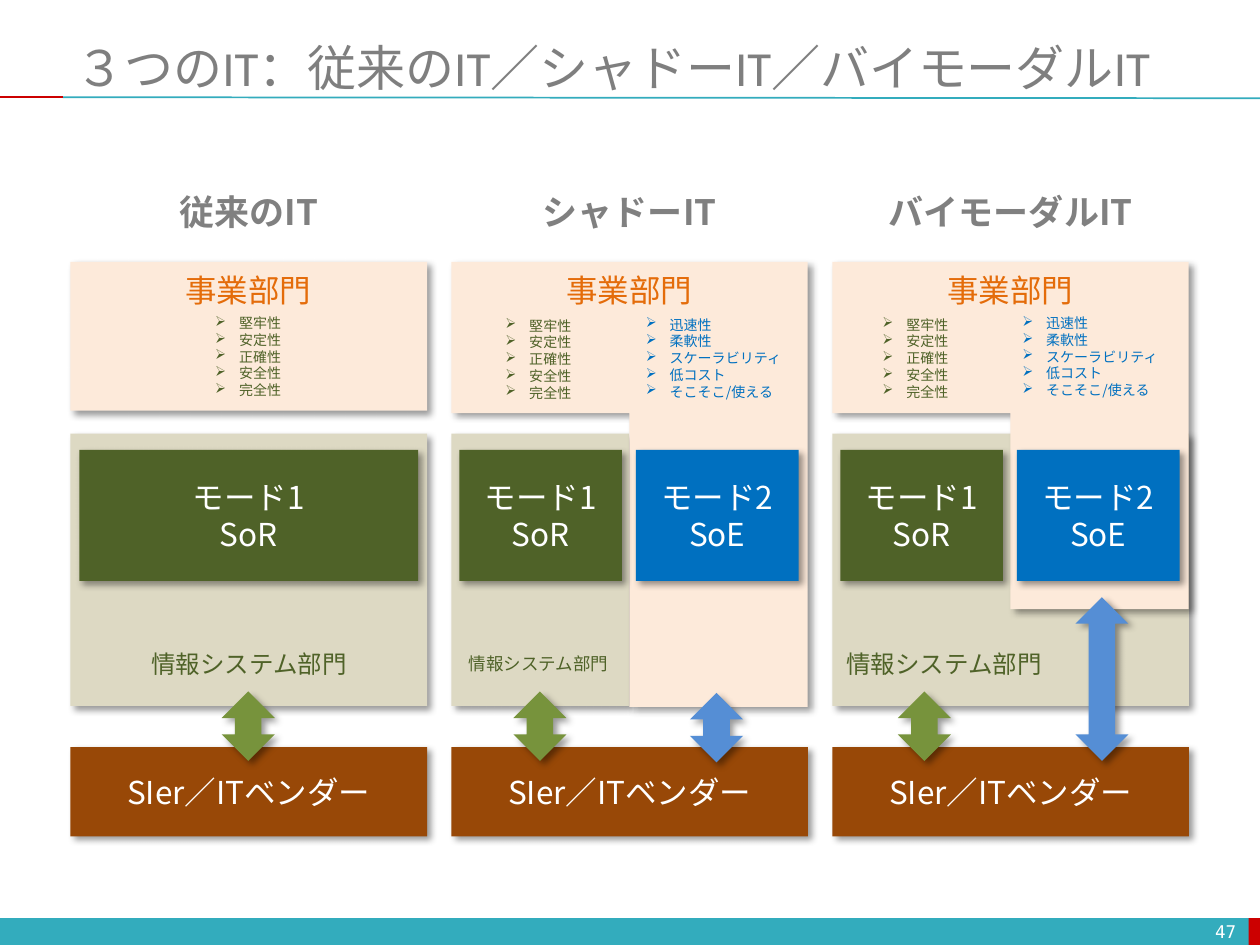
"""Build a slide comparing traditional, shadow and bimodal IT organisations."""
import pptx
import pptx.dml.color
import pptx.enum.shapes
import pptx.enum.text
import pptx.oxml
import pptx.oxml.ns
import pptx.util
from pptx.util import Cm

COLORS = {
    "teal": "33ACBD", "red": "CC0000", "title": "7F7F7F", "heading": "808080",
    "white": "FFFFFF", "system": "DDD9C3", "business": "FDEADA", "vendor": "984807",
    "robust": "4F6228", "agile": "0070C0", "label": "E46C0A",
    "green arrow": "77933C", "blue arrow": "558ED5",
}
FONT = "Noto Sans CJK JP"
SHADOW = (
    '<a:effectLst %s><a:outerShdw blurRad="50800" dist="38100" dir="2700000" algn="tl" '
    'rotWithShape="0"><a:srgbClr val="000000"><a:alpha val="40000"/></a:srgbClr>'
    '</a:outerShdw></a:effectLst>' % pptx.oxml.ns.nsdecls("a")
)
SHAPE = pptx.enum.shapes.MSO_SHAPE
ALIGN = pptx.enum.text.PP_ALIGN
ANCHOR = pptx.enum.text.MSO_ANCHOR


def paint(shape, color, shadow=True):
    """Fill a shape without an outline and give it a soft shadow if wanted."""
    shape.shadow.inherit = False
    shape.fill.solid()
    shape.fill.fore_color.rgb = pptx.dml.color.RGBColor.from_string(COLORS[color])
    shape.line.fill.background()
    if shadow:
        properties = shape._element.spPr
        properties.remove(properties.find(pptx.oxml.ns.qn("a:effectLst")))
        properties.append(pptx.oxml.parse_xml(SHADOW))


def write(shape, lines, size, color, align=ALIGN.CENTER, font=FONT, bold=False,
          bullet=None, label=False):
    """Write one paragraph per line; a label grows to its text instead of wrapping."""
    frame = shape.text_frame
    frame.word_wrap = not label
    frame.vertical_anchor = ANCHOR.TOP if label else ANCHOR.MIDDLE
    frame.auto_size = (pptx.enum.text.MSO_AUTO_SIZE.SHAPE_TO_FIT_TEXT if label
                       else pptx.enum.text.MSO_AUTO_SIZE.NONE)
    for number, line in enumerate(lines):
        para = frame.paragraphs[0] if number == 0 else frame.add_paragraph()
        para.alignment = align
        if bullet:
            settings = para._p.get_or_add_pPr()
            settings.set("marL", str(Cm(0.48)))
            settings.set("indent", str(-Cm(0.48)))
            mark = pptx.oxml.parse_xml('<a:buChar %s/>' % pptx.oxml.ns.nsdecls("a"))
            mark.set("char", bullet)
            settings.append(mark)
        span = para.add_run()
        span.text = line
        span.font.size = pptx.util.Pt(size)
        span.font.bold = bold
        span.font.name = font
        span.font.color.rgb = pptx.dml.color.RGBColor.from_string(COLORS[color])
        east_asian = pptx.oxml.parse_xml('<a:ea %s/>' % pptx.oxml.ns.nsdecls("a"))
        east_asian.set("typeface", FONT)
        span._r.get_or_add_rPr().append(east_asian)


deck = pptx.Presentation()
deck.slide_width, deck.slide_height = Cm(25.4), Cm(19.05)
page = deck.slides.add_slide(deck.slide_layouts[5])
shapes = page.shapes

for left, width, color in ((0, 25.4, "teal"), (25.17, 0.23, "red")):
    band = shapes.add_shape(SHAPE.RECTANGLE, Cm(left), Cm(18.51), Cm(width), Cm(0.54))
    paint(band, color, shadow=False)

for start, end, drop, color in ((1.27, 25.4, 0.02, "teal"), (0, 1.27, 0, "red")):
    rule = shapes.add_connector(pptx.enum.shapes.MSO_CONNECTOR.STRAIGHT,
                                Cm(start), Cm(1.96), Cm(end), Cm(1.96 + drop))
    rule.line.width = pptx.util.Pt(1)
    rule.line.color.rgb = pptx.dml.color.RGBColor.from_string(COLORS[color])
    rule._element.spPr.append(
        pptx.oxml.parse_xml('<a:effectLst %s/>' % pptx.oxml.ns.nsdecls("a")))

title = shapes.title
title.left, title.top, title.width, title.height = Cm(1.27), Cm(0.76), Cm(24.13), Cm(1.17)
write(title, ["３つのIT：従来のIT／シャドーIT／バイモーダルIT"], 28, "title",
      ALIGN.LEFT, "Calibri")
number_box = shapes.add_textbox(Cm(19.25), Cm(18.47), Cm(5.92), Cm(0.61))
write(number_box, ["47"], 10, "white", ALIGN.RIGHT, "DejaVu Sans Mono")

ROBUST = ["堅牢性", "安定性", "正確性", "安全性", "完全性"]
AGILE = ["迅速性", "柔軟性", "スケーラビリティ", "低コスト", "そこそこ/使える"]
WIDTH, PITCH = 7.19, 7.68
columns = [
    {"heading": "従来のIT", "heading width": 3.48, "system width": WIDTH,
     "department": (1.35, 12.95, 4.5, 0.86, 14),
     "modes": [(0.18, 6.83, "1", "SoR", "robust")],
     "lists": [(2.67, 6.22, 1.85, ROBUST, "robust")],
     "arrows": [(3.05, 13.94, 1.4, "green arrow")]},
    {"heading": "シャドーIT", "heading width": 4.19, "system width": 3.58, "foot": 8.97,
     "department": (0.08, 13.03, 3.35, 0.69, 10),
     "modes": [(0.16, 3.28, "1", "SoR", "robust"), (3.72, 3.28, "2", "SoE", "agile")],
     "lists": [(0.84, 6.27, 1.85, ROBUST, "robust"), (3.67, 6.25, 3.4, AGILE, "agile")],
     "arrows": [(1.25, 13.94, 1.4, "green arrow"), (4.81, 13.97, 1.4, "blue arrow")]},
    {"heading": "バイモーダルIT", "heading width": 5.61, "system width": WIDTH, "foot": 7,
     "department": (0, 12.95, 4.5, 0.86, 14),
     "modes": [(0.16, 3.28, "1", "SoR", "robust"), (3.72, 3.28, "2", "SoE", "agile")],
     "lists": [(0.76, 6.25, 1.85, ROBUST, "robust"), (3.58, 6.22, 3.4, AGILE, "agile")],
     "arrows": [(1.32, 13.94, 1.4, "green arrow"), (4.9, 12.04, 3.3, "blue arrow")]},
]

for index, column in enumerate(columns):
    left = 1.42 + index * PITCH
    center = left + WIDTH / 2

    system = shapes.add_shape(SHAPE.RECTANGLE, Cm(left), Cm(8.74),
                              Cm(column["system width"]), Cm(5.49))
    paint(system, "system")
    if "foot" in column:
        foot = column["foot"]
        outline = [(0, 3.05), (3.59, 3.05), (3.59, foot), (7.18, foot), (7.18, 0)]
        builder = shapes.build_freeform(Cm(left), Cm(5.28))
        builder.add_line_segments([(Cm(left + x), Cm(5.28 + y)) for x, y in outline])
        business = builder.convert_to_shape()
    else:
        business = shapes.add_shape(SHAPE.RECTANGLE, Cm(left), Cm(5.28), Cm(WIDTH), Cm(3))
    paint(business, "business")

    vendor = shapes.add_shape(SHAPE.RECTANGLE, Cm(left), Cm(15.06), Cm(WIDTH), Cm(1.8))
    paint(vendor, "vendor")
    write(vendor, ["SIer／ITベンダー"], 18, "white")

    for offset, width, mode, purpose, color in column["modes"]:
        block = shapes.add_shape(SHAPE.RECTANGLE, Cm(left + offset), Cm(9.07),
                                 Cm(width), Cm(2.64))
        paint(block, color)
        write(block, ["モード" + mode, purpose], 18, "white")

    offset, top, width, height, size = column["department"]
    department = shapes.add_textbox(Cm(left + offset), Cm(top), Cm(width), Cm(height))
    write(department, ["情報システム部門"], size, "robust", label=True)

    division = shapes.add_textbox(Cm(center - 1.54), Cm(5.33), Cm(3.07), Cm(1.02))
    write(division, ["事業部門"], 18, "label", label=True)

    width = column["heading width"]
    heading = shapes.add_textbox(Cm(center - width / 2), Cm(3.71), Cm(width), Cm(1.12))
    write(heading, [column["heading"]], 20, "heading", bold=True, label=True)

    for offset, top, width, traits, color in column["lists"]:
        trait_box = shapes.add_textbox(Cm(left + offset), Cm(top), Cm(width), Cm(1.96))
        write(trait_box, traits, 8, color, ALIGN.LEFT, bullet="➢", label=True)

    for offset, top, height, color in column["arrows"]:
        arrow = shapes.add_shape(SHAPE.UP_DOWN_ARROW, Cm(left + offset), Cm(top),
                                 Cm(1.07), Cm(height))
        paint(arrow, color)

deck.save("out.pptx")
